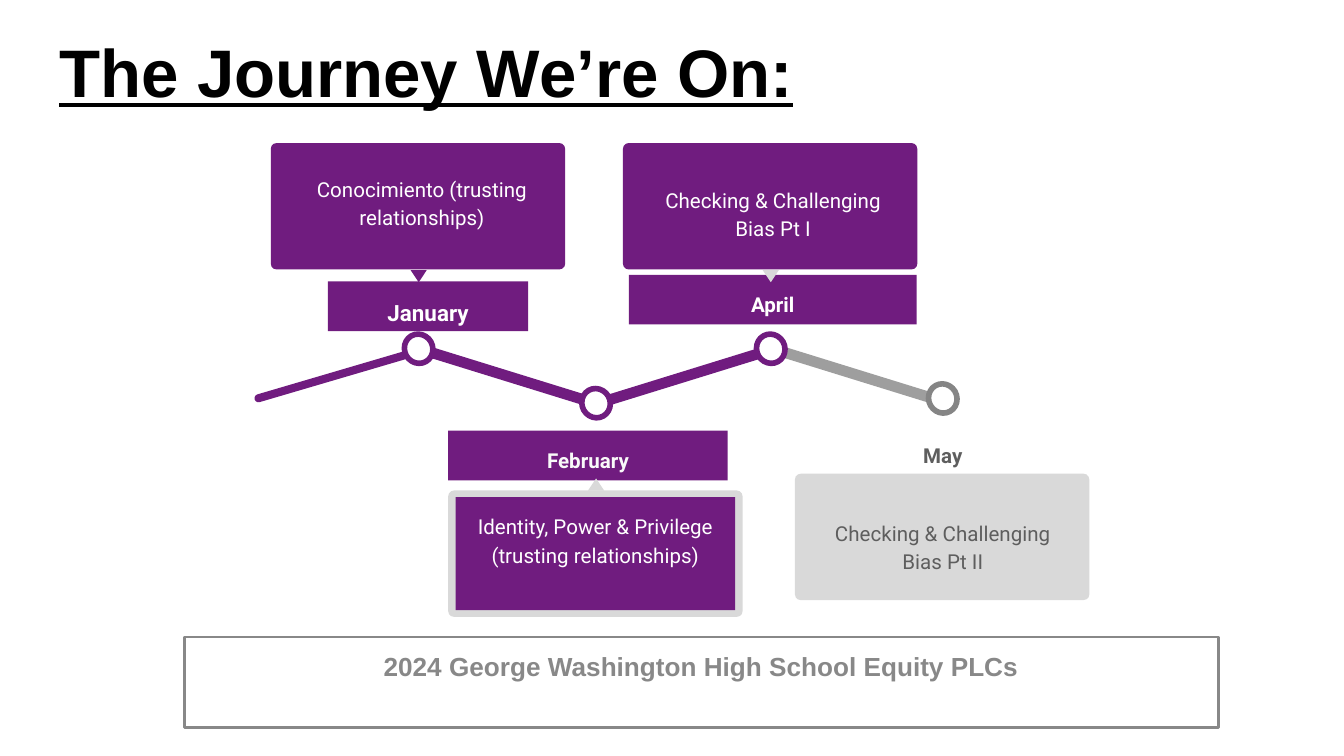
from dataclasses import dataclass
from typing import Optional

from pptx import Presentation
from pptx.dml.color import RGBColor
from pptx.enum.shapes import MSO_SHAPE as Preset
from pptx.enum.text import MSO_ANCHOR as Anchor, MSO_AUTO_SIZE as AutoSize, PP_ALIGN as Align
from pptx.util import Emu, Pt

PX = 4572
WHITE = RGBColor(0xFF, 0xFF, 0xFF)
OFF_WHITE = RGBColor(0xF9, 0xF9, 0xF9)
BLACK = RGBColor(0x00, 0x00, 0x00)
PURPLE = RGBColor(0x70, 0x1C, 0x7F)
LIGHT_GRAY = RGBColor(0xD9, 0xD9, 0xD9)
PATH_GRAY = RGBColor(0x9E, 0x9E, 0x9E)
DOT_GRAY = RGBColor(0x85, 0x85, 0x85)
FOOTER_GRAY = RGBColor(0x88, 0x88, 0x88)
TEXT_GRAY = RGBColor(0x5E, 0x5E, 0x5E)

CARD_WIDTH, CARD_HEIGHT = 438, 188


@dataclass
class Stage:
    month: str
    note: str
    origin: tuple
    dot_top: int
    month_box: tuple
    note_box: tuple
    pointer: tuple
    pointer_angle: int = 0
    card_color: RGBColor = PURPLE
    pointer_color: RGBColor = LIGHT_GRAY
    dot_color: RGBColor = PURPLE
    month_fill: Optional[RGBColor] = PURPLE
    note_fill: Optional[RGBColor] = None
    month_color: RGBColor = WHITE
    note_color: RGBColor = WHITE
    month_size: int = 11


STAGES_BEFORE_FOOTER = [
    Stage("February", "Identity, Power & Privilege (trusting relationships)",
          (667, 730), -152, (0, -89, 416, 74), (11, 10, 416, 168), (208, -18),
          card_color=LIGHT_GRAY, note_fill=PURPLE, month_color=OFF_WHITE),
    Stage("April", "Checking & Challenging Bias Pt I",
          (927, 213), 284, (9, 196, 428, 74), (11, 41, 425, 138), (208, 189),
          pointer_angle=180),
    Stage("May", "Checking & Challenging Bias Pt II",
          (1183, 705), -134, (12, -71, 416, 74), (12, 45, 416, 138), (245, 15),
          card_color=LIGHT_GRAY, dot_color=DOT_GRAY, month_fill=None,
          month_color=TEXT_GRAY, note_color=TEXT_GRAY),
]
STAGE_AFTER_FOOTER = Stage(
    "January", "Conocimiento (trusting relationships)",
    (403, 213), 284, (85, 206, 298, 74), (17, 25, 416, 138), (208, 189),
    pointer_angle=180, pointer_color=PURPLE, note_fill=PURPLE, month_size=12)

PATH_SEGMENTS = [
    ((1138, 552, 288, 16), 17.2, PATH_GRAY),
    ((876, 552, 288, 16), -17.2, PURPLE),
    ((612, 552, 288, 16), 17.2, PURPLE),
    ((374, 554, 244, 12), -16.4, PURPLE),
]


def to_emu(box):
    return [Emu(value * PX) for value in box]


def add_block(slide, preset, box, fill=None, line=None, line_width=1.5, angle=0, corner=None):
    shape = slide.shapes.add_shape(preset, *to_emu(box))
    shape.shadow.inherit = False
    shape.rotation = angle
    if corner is not None:
        shape.adjustments[0] = corner
    if fill is None:
        shape.fill.background()
    else:
        shape.fill.solid()
        shape.fill.fore_color.rgb = fill
    if line is None:
        shape.line.fill.background()
    else:
        shape.line.color.rgb = line
        shape.line.width = Pt(line_width)
    return shape


def add_run(paragraph, text, name, size, color, bold):
    run = paragraph.add_run()
    run.text = text
    run.font.name = name
    run.font.size = Pt(size)
    run.font.color.rgb = color
    run.font.bold = bold
    return run


def prepare_frame(shape):
    frame = shape.text_frame
    frame.word_wrap = True
    frame.vertical_anchor = Anchor.TOP
    frame.margin_left = frame.margin_right = Emu(20 * PX)
    frame.margin_top = frame.margin_bottom = Emu(20 * PX)
    paragraph = frame.paragraphs[0]
    paragraph.alignment = Align.CENTER
    return paragraph


def add_label(slide, box, text, size, color, fill, bold=False):
    if fill is None:
        shape = slide.shapes.add_textbox(*to_emu(box))
    else:
        shape = add_block(slide, Preset.RECTANGLE, box, fill)
    paragraph = prepare_frame(shape)
    paragraph.line_spacing = 1.15
    paragraph.space_after = Pt(16)
    add_run(paragraph, text, "Roboto", size, color, bold)


def add_title(slide, box):
    title = slide.shapes.title
    title.left, title.top, title.width, title.height = to_emu(box)
    frame = title.text_frame
    frame.auto_size = AutoSize.NONE
    frame.vertical_anchor = Anchor.MIDDLE
    paragraph = frame.paragraphs[0]
    paragraph.alignment = Align.LEFT
    paragraph.line_spacing = 0.9
    run = add_run(paragraph, "The Journey We’re On:", "Arial", 36, BLACK, True)
    run.font.underline = True


def add_journey_path(slide):
    for box, angle, color in PATH_SEGMENTS:
        add_block(slide, Preset.ROUNDED_RECTANGLE, box, color, angle=angle, corner=0.5)


def add_stage(slide, stage):
    left, top = stage.origin

    def place(x, y, width, height):
        return left + x, top + y, width, height

    add_block(slide, Preset.OVAL, place(199, stage.dot_top, 42, 44), WHITE,
              line=stage.dot_color, line_width=3, angle=-29.8)
    add_label(slide, place(*stage.month_box), stage.month, stage.month_size,
              stage.month_color, stage.month_fill, bold=True)
    add_block(slide, Preset.ROUNDED_RECTANGLE, place(0, 0, CARD_WIDTH, CARD_HEIGHT),
              stage.card_color, corner=0.045)
    add_block(slide, Preset.ISOSCELES_TRIANGLE, place(*stage.pointer, 24, 18),
              stage.pointer_color, angle=stage.pointer_angle)
    add_label(slide, place(*stage.note_box), stage.note, 11, stage.note_color, stage.note_fill)


def add_footer(slide, box):
    shape = add_block(slide, Preset.RECTANGLE, box, line=FOOTER_GRAY)
    paragraph = prepare_frame(shape)
    add_run(paragraph, "2024 George Washington High School Equity PLCs",
            "Arial", 14, FOOTER_GRAY, True)


def main():
    presentation = Presentation()
    presentation.slide_width, presentation.slide_height = to_emu((2000, 1125))
    slide = presentation.slides.add_slide(presentation.slide_layouts[5])
    add_title(slide, (68, 44, 1864, 138))
    add_journey_path(slide)
    for stage in STAGES_BEFORE_FOOTER:
        add_stage(slide, stage)
    add_footer(slide, (274, 948, 1539, 135))
    add_stage(slide, STAGE_AFTER_FOOTER)
    presentation.save("out.pptx")


if __name__ == "__main__":
    main()
